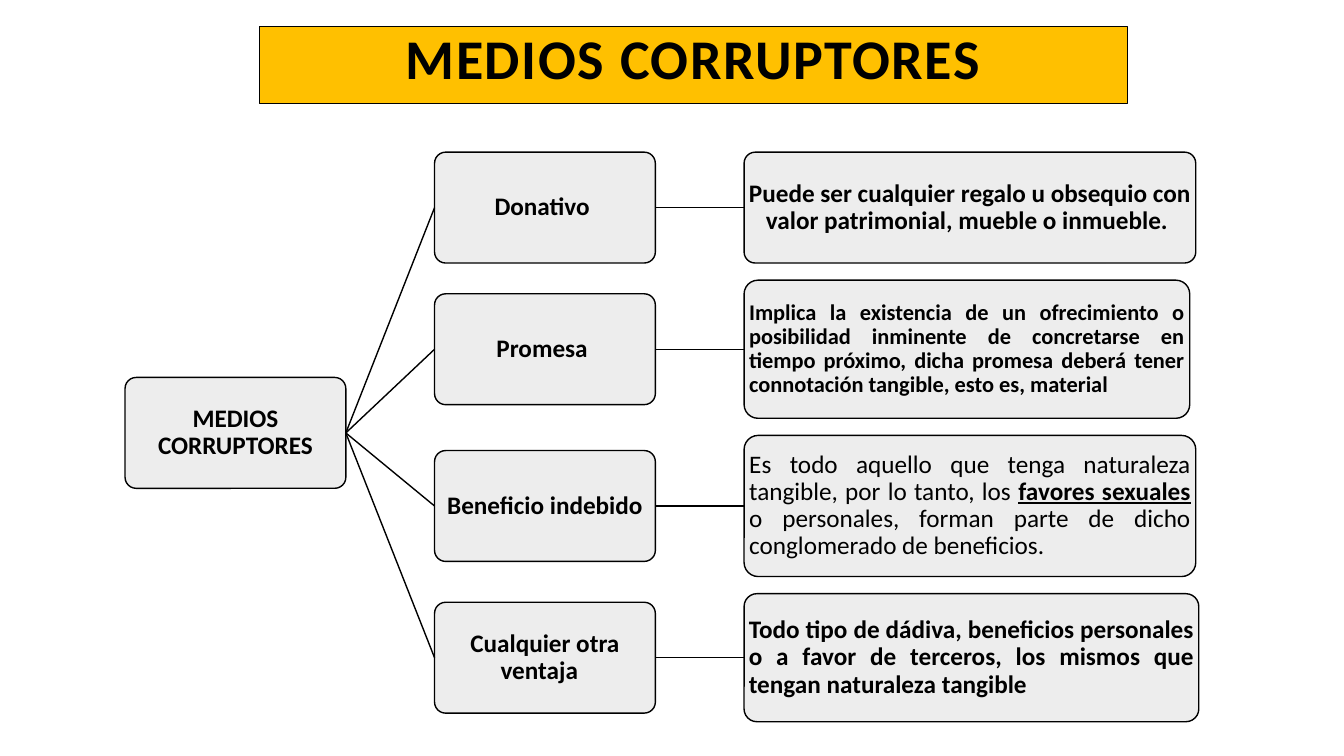
from pptx import Presentation
from pptx.dml.color import RGBColor
from pptx.enum.shapes import MSO_CONNECTOR, MSO_SHAPE
from pptx.enum.text import MSO_ANCHOR, MSO_AUTO_SIZE, PP_ALIGN
from pptx.oxml.ns import qn
from pptx.util import Inches, Pt
from lxml import etree

BLACK = RGBColor(0x00, 0x00, 0x00)
AMBER = RGBColor(0xFF, 0xC0, 0x00)
GREY = RGBColor(0xED, 0xED, 0xED)
CENTER, JUSTIFY = PP_ALIGN.CENTER, PP_ALIGN.JUSTIFY
TOP, MIDDLE = MSO_ANCHOR.TOP, MSO_ANCHOR.MIDDLE
ROUNDED = MSO_SHAPE.ROUNDED_RECTANGLE
STRAIGHT = MSO_CONNECTOR.STRAIGHT
NO_AUTOFIT = MSO_AUTO_SIZE.NONE
LEFT_SITE, RIGHT_SITE = 1, 3

TITLE = "MEDIOS CORRUPTORES"
NODE_WIDTH, NODE_HEIGHT = 2.19, 1.1
COLUMN_GAP, ROW_GAP = 0.88, 0.17

# Branch label, detail spans as (text, emphasised), width, height, size, alignment, bold
ROWS = [
    ("Donativo ",
     [("Puede ser cualquier regalo u obsequio con valor patrimonial, "
       "mueble o inmueble. ", False)],
     4.48, 1.1, 18, CENTER, True),
    ("Promesa ",
     [("Implica la existencia de un ofrecimiento o posibilidad inminente de "
       "concretarse en tiempo próximo, dicha promesa deberá tener "
       "connotación tangible, esto es, material", False)],
     4.42, 1.37, 16, JUSTIFY, True),
    ("Beneficio indebido",
     [("Es todo aquello que tenga naturaleza tangible, por lo tanto, los ", False),
      ("favores sexuales ", True),
      ("o personales, forman parte de dicho conglomerado de beneficios.", False)],
     4.48, 1.4, 18, JUSTIFY, False),
    ("Cualquier otra ventaja  ",
     [("Todo tipo de dádiva, beneficios personales o a favor de terceros, "
       "los mismos que tengan naturaleza tangible", False)],
     4.51, 1.27, 18, JUSTIFY, True),
]


def style_span(span, size, bold):
    span.font.name = "Calibri"
    span.font.size = Pt(size)
    span.font.bold = bold
    span.font.color.rgb = BLACK


def style_box(box, fill, line_width):
    box.fill.solid()
    box.fill.fore_color.rgb = fill
    box.line.color.rgb = BLACK
    box.line.width = Pt(line_width)


def add_title(page, left, top, width, height):
    title = page.shapes.title
    title.left, title.top = Inches(left), Inches(top)
    title.width, title.height = Inches(width), Inches(height)
    style_box(title, AMBER, 0.5)
    frame = title.text_frame
    frame.text = TITLE
    frame.auto_size = NO_AUTOFIT
    frame.vertical_anchor = TOP
    para = frame.paragraphs[0]
    para.alignment = CENTER
    para.line_spacing = 0.9
    span = para.runs[0]
    style_span(span, 40, True)
    span.font._element.set("spc", "120")


def add_node(page, left, top, width, height, spans,
             size=18, alignment=CENTER, bold=True):
    node = page.shapes.add_shape(
        ROUNDED, Inches(left), Inches(top), Inches(width), Inches(height))
    node.adjustments[0] = 0.1
    node.shadow.inherit = False
    style_box(node, GREY, 1)
    frame = node.text_frame
    frame.word_wrap = True
    frame.vertical_anchor = MIDDLE
    frame.margin_left = frame.margin_right = Inches(0.01)
    frame.margin_top = frame.margin_bottom = Inches(0.01)
    para = frame.paragraphs[0]
    para.alignment = alignment
    para.line_spacing = 0.9
    for text, emphasised in spans:
        span = para.add_run()
        span.text = text
        style_span(span, size, bold or emphasised)
        if emphasised:
            span.font.underline = True
    return node


def link(page, start, end):
    """Join the right side of start to the left side of end."""
    line = page.shapes.add_connector(STRAIGHT, 0, 0, 0, 0)
    line.begin_connect(start, RIGHT_SITE)
    line.end_connect(end, LEFT_SITE)
    line.line.color.rgb = BLACK
    line.line.width = Pt(1)
    etree.SubElement(line._element.spPr, qn("a:effectLst"))


def add_tree(page, left, top):
    total = sum(row[3] for row in ROWS) + ROW_GAP * (len(ROWS) - 1)
    branch_left = left + NODE_WIDTH + COLUMN_GAP
    detail_left = branch_left + NODE_WIDTH + COLUMN_GAP
    root_top = top + (total - NODE_HEIGHT) / 2 - 0.04
    root = add_node(page, left, root_top, NODE_WIDTH, NODE_HEIGHT, [(TITLE, False)])
    for label, spans, width, height, size, alignment, bold in ROWS:
        branch_top = top + (height - NODE_HEIGHT) / 2
        branch = add_node(page, branch_left, branch_top,
                          NODE_WIDTH, NODE_HEIGHT, [(label, False)])
        detail = add_node(page, detail_left, top, width, height,
                          spans, size, alignment, bold)
        link(page, root, branch)
        link(page, branch, detail)
        top += height + ROW_GAP


def main():
    deck = Presentation()
    deck.slide_width, deck.slide_height = Inches(13.33), Inches(7.5)
    page = deck.slides.add_slide(deck.slide_layouts[5])
    add_title(page, 2.57, 0.26, 8.61, 0.77)
    add_tree(page, 1.24, 1.51)
    deck.save("out.pptx")


if __name__ == "__main__":
    main()
